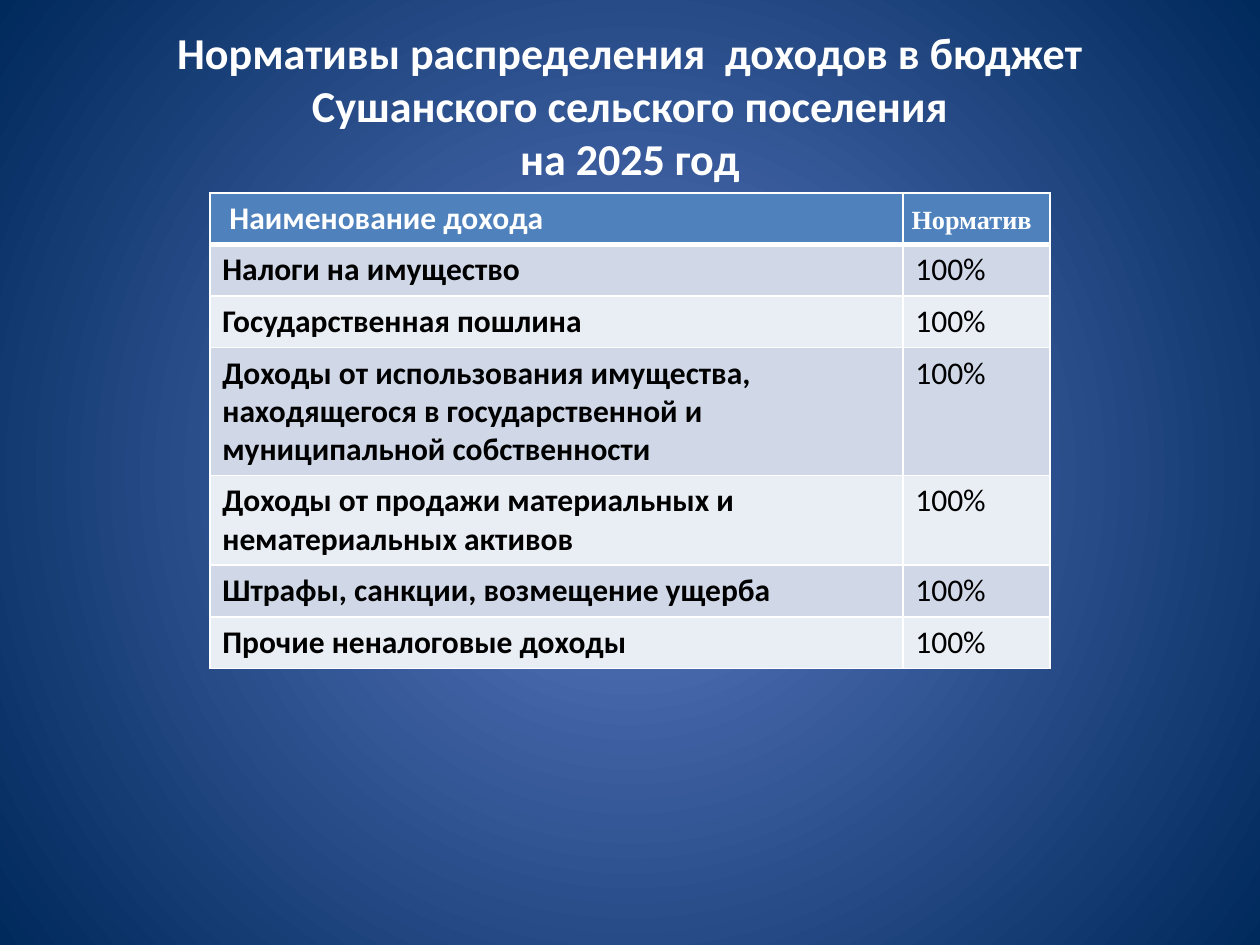
from pptx import Presentation, util as u
from pptx.dml.color import RGBColor
from pptx.enum import text
from pptx.oxml import parse_xml
from pptx.oxml.ns import nsdecls

HEADING = ["Нормативы распределения  доходов в бюджет", "Сушанского сельского поселения", "на 2025 год"]
HEADER = (" Наименование дохода", "Норматив")
INCOMES = [
    ("Налоги на имущество", "100%"),
    ("Государственная пошлина", "100%"),
    ("Доходы от использования имущества, находящегося в государственной и муниципальной собственности", "100%"),
    ("Доходы от продажи материальных и нематериальных активов", "100%"),
    ("Штрафы, санкции, возмещение ущерба", "100%"),
    ("Прочие неналоговые доходы", "100%"),
]
COLUMNS = (5.5, 1.17)
ROW = 0.41
WHITE, BLACK = RGBColor(255, 255, 255), RGBColor(0, 0, 0)
GLOW, NAVY = RGBColor(0x5E, 0x7C, 0xC5), RGBColor(0x00, 0x29, 0x5C)
BLUE = RGBColor(0x4F, 0x81, 0xBD)
BANDS = (RGBColor(0xD0, 0xD8, 0xE8), RGBColor(0xE9, 0xED, 0xF4))


def style(paragraph, size, color, bold, face="Calibri"):
    for run in paragraph.runs:
        font = run.font
        font.size, font.bold, font.name = u.Pt(size), bold, face
        font.color.rgb = color


def paint_background(slide):
    fill = slide.background.fill
    fill.gradient()
    for stop, color, position in zip(fill.gradient_stops, (GLOW, NAVY), (0, 1)):
        stop.color.rgb, stop.position = color, position
    linear = slide.background._cSld.xpath(".//*[local-name()='lin']")[0]
    linear.getparent().replace(linear, parse_xml(
        f'<a:path {nsdecls("a")} path="circle">'
        '<a:fillToRect l="50000" t="50000" r="50000" b="50000"/></a:path>'))


def add_borders(cell, bottom):
    properties = cell._tc.get_or_add_tcPr()
    for index, (side, width) in enumerate(zip("LRTB", (1, 1, 1, bottom))):
        properties.insert(index, parse_xml(
            f'<a:ln{side} {nsdecls("a")} w="{u.Pt(width)}"><a:solidFill>'
            f'<a:srgbClr val="{WHITE}"/></a:solidFill></a:ln{side}>'))


def add_heading(slide):
    heading = slide.shapes.title
    heading.left, heading.top, heading.width, heading.height = map(u.Inches, (0.5, 0.3, 9, 1.25))
    frame = heading.text_frame
    frame.text = "\v".join(HEADING)
    frame.word_wrap = True
    frame.auto_size = text.MSO_AUTO_SIZE.NONE
    frame.vertical_anchor = text.MSO_ANCHOR.MIDDLE
    frame.margin_top, frame.margin_bottom = 0, u.Inches(0.19)
    frame.paragraphs[0].alignment = text.PP_ALIGN.CENTER
    style(frame.paragraphs[0], 25.2, WHITE, True)


def add_incomes(slide):
    rows = [HEADER, *INCOMES]
    width = sum(COLUMNS)
    table = slide.shapes.add_table(
        len(rows), len(COLUMNS), u.Inches((10 - width) / 2), u.Inches(1.53),
        u.Inches(width), u.Inches(ROW * len(rows))).table
    for column, share in zip(table.columns, COLUMNS):
        column.width = u.Inches(share)
    for r, row in enumerate(rows):
        for c, wording in enumerate(row):
            cell = table.cell(r, c)
            cell.text = wording
            cell.fill.solid()
            cell.fill.fore_color.rgb = BANDS[(r - 1) % 2] if r else BLUE
            add_borders(cell, 1 if r else 3)
            style(cell.text_frame.paragraphs[0], 18, BLACK if r else WHITE, r == 0 or c == 0)
    rate = table.cell(0, 1)
    rate.margin_left = rate.margin_right = u.Inches(0.07)
    rate.margin_top, rate.margin_bottom = u.Pt(12), 0
    label = rate.text_frame.paragraphs[0]
    label.alignment, label.line_spacing = text.PP_ALIGN.JUSTIFY, u.Pt(12)
    style(label, 15, WHITE, True, "Times New Roman")


def main():
    """Build the slide of income shares for the settlement budget."""
    deck = Presentation()
    deck.slide_width, deck.slide_height = u.Inches(10), u.Inches(7.5)
    slide = deck.slides.add_slide(deck.slide_layouts[5])
    paint_background(slide)
    add_heading(slide)
    add_incomes(slide)
    deck.save("out.pptx")


if __name__ == "__main__":
    main()
